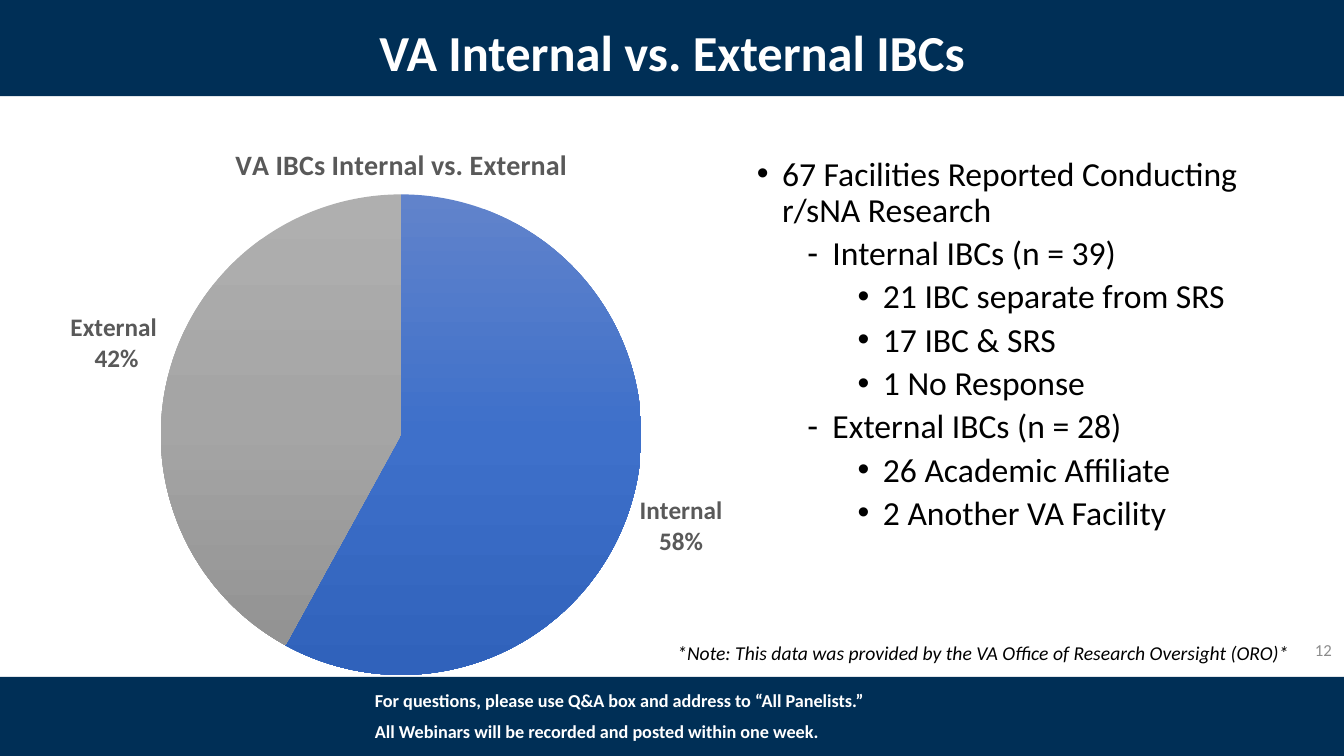
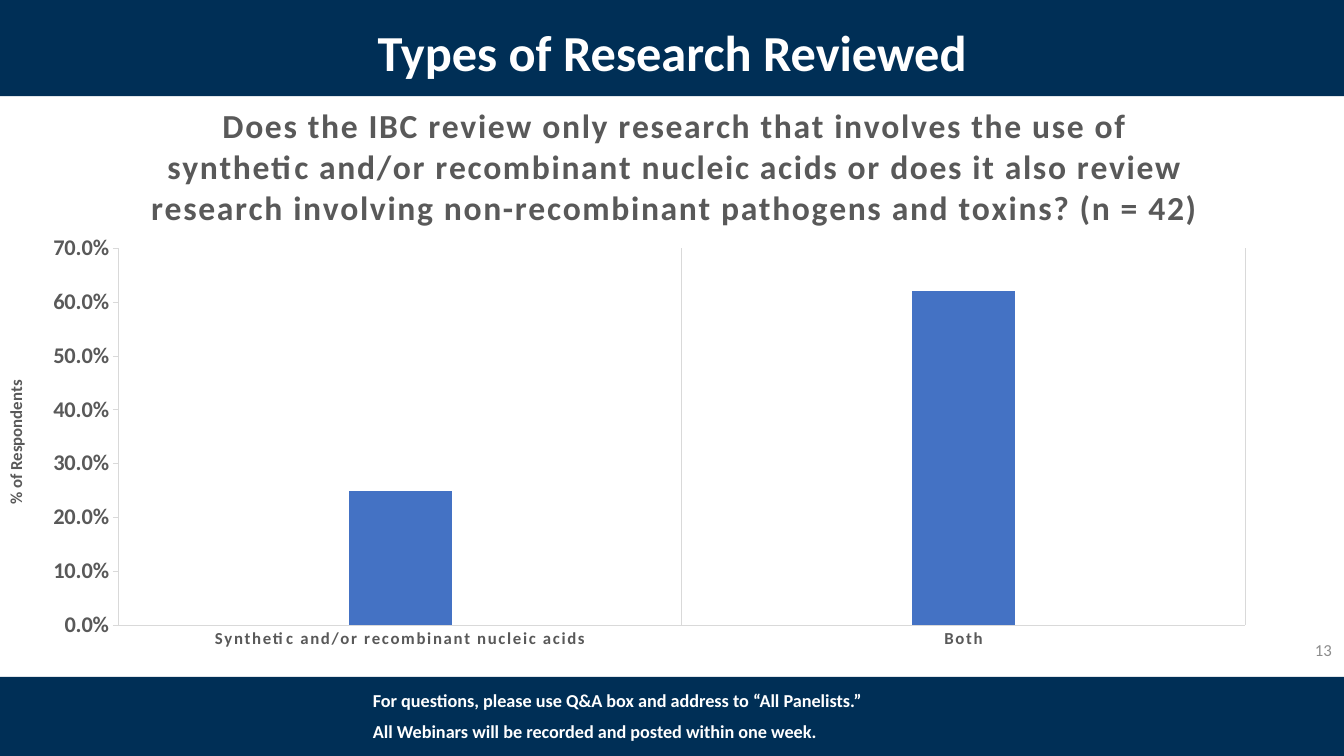
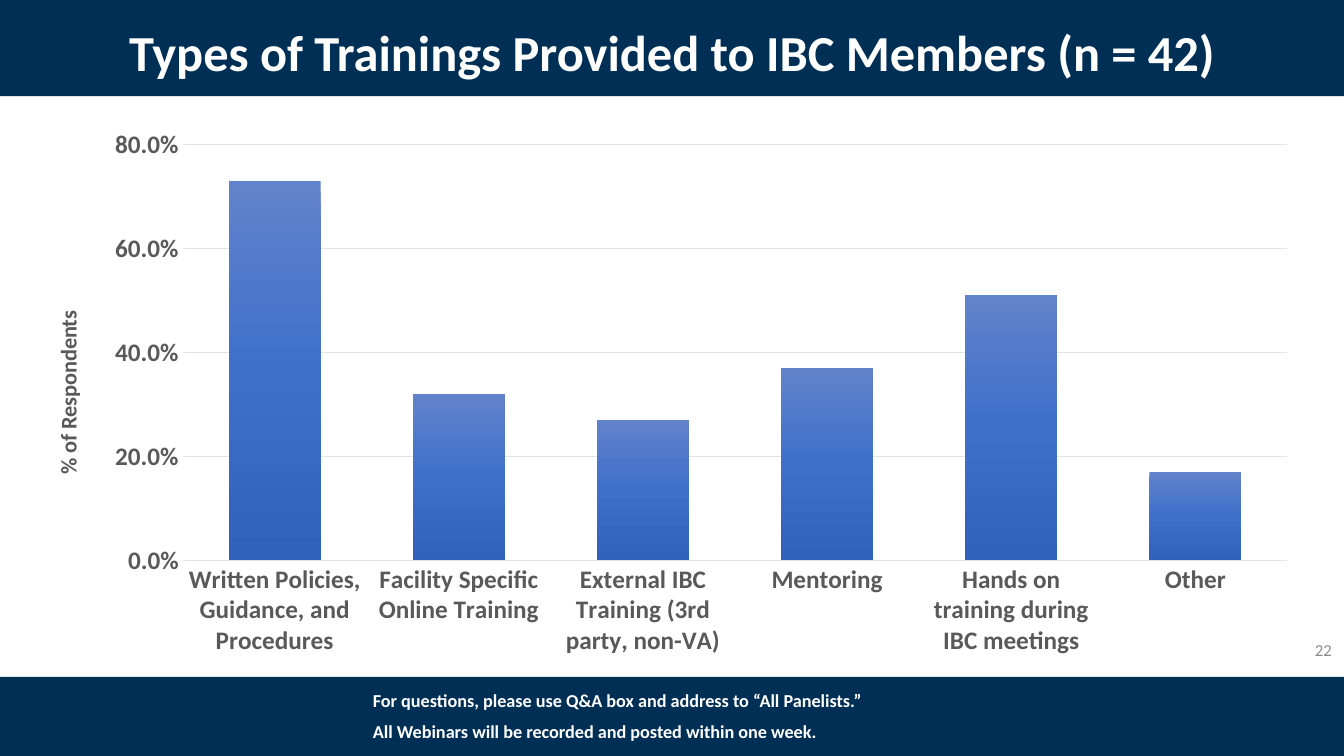
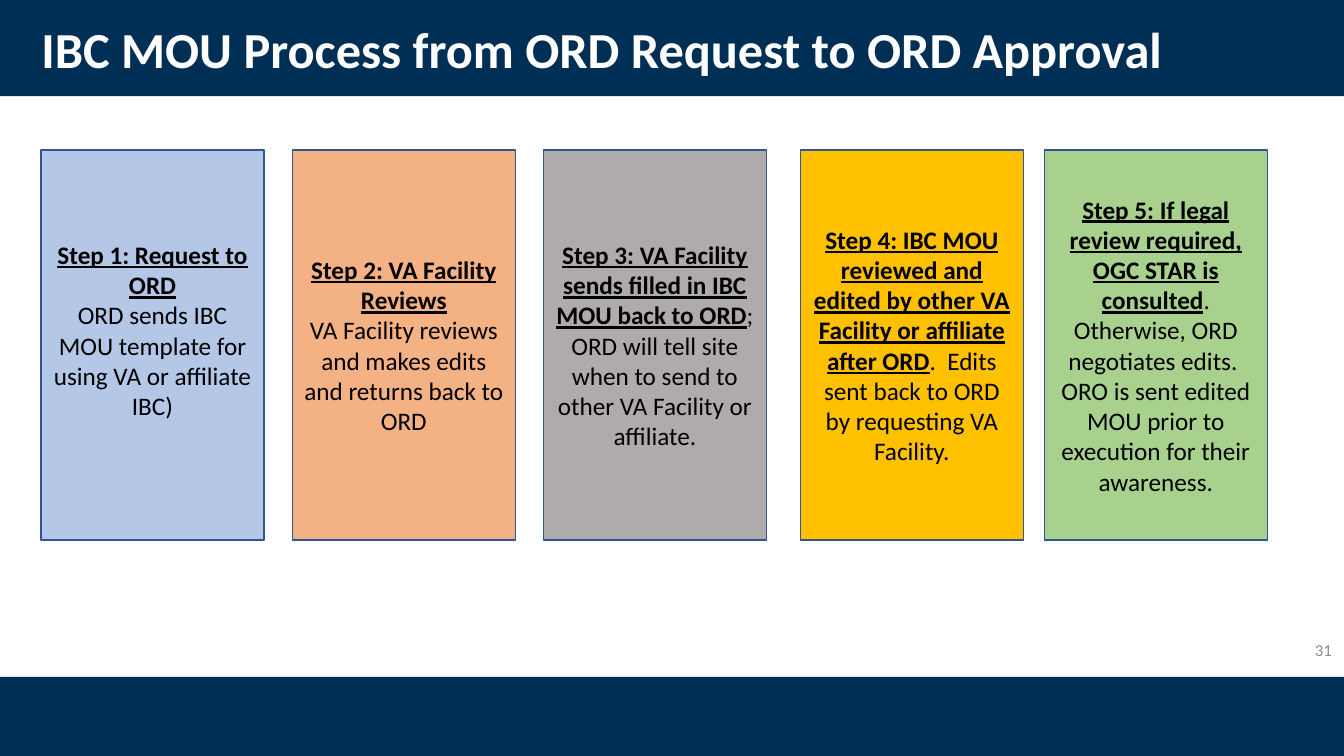
"""Build four slides on the survey of institutional biosafety committees."""
from copy import deepcopy

from lxml import etree
from pptx import Presentation
from pptx import util as u
from pptx.chart.data import CategoryChartData
from pptx.dml.color import RGBColor
from pptx.enum import chart as charts, shapes, text
from pptx.oxml.ns import qn

WIDTH, HEIGHT = u.Inches(13.33), u.Inches(7.5)
FONT = "Calibri"
NAVY, WHITE, BLACK = "002F56", "FFFFFF", "000000"
GRAY, PALE, RULE, SOFT_RULE = "595959", "8C8C8C", "D9D9D9", "E0E5EB"
BLUE, OUTLINE = "4472C4", "325491"
BLUE_FADE = ("6183CB", "3E70CA", "3062BB")
GRAY_FADE = ("AFAFAF", "A5A5A5", "939393")
LEFT, CENTER, RIGHT = text.PP_ALIGN.LEFT, text.PP_ALIGN.CENTER, text.PP_ALIGN.RIGHT
MIDDLE = text.MSO_ANCHOR.MIDDLE

TITLE_AREA = (6.9, 1.83, 86.25, 10.93)
FOOTER = (
    "For questions, please use Q&A box and address to “All Panelists.”\n"
    "All Webinars will be recorded and posted within one week."
)
FACILITIES = [
    (0, "67 Facilities Reported Conducting r/sNA Research"),
    (1, "Internal IBCs (n = 39)"),
    (2, "21 IBC separate from SRS"),
    (2, "17 IBC & SRS"),
    (2, "1 No Response"),
    (1, "External IBCs (n = 28)"),
    (2, "26 Academic Affiliate"),
    (2, "2 Another VA Facility"),
]
NOTE = "*Note: This data was provided by the VA Office of Research Oversight (ORO)*"
QUESTION = (
    "Does the IBC review only research that involves the use of\n"
    "synthetic and/or recombinant nucleic acids or does it also review\n"
    "research involving non-recombinant pathogens and toxins? (n = 42)"
)
RESEARCH = {"Synthetic and/or recombinant nucleic acids": 0.25, "Both": 0.62}
TRAININGS = {
    "Written Policies, Guidance, and Procedures": 0.73,
    "Facility Specific Online Training": 0.32,
    "External IBC Training (3rd party, non-VA)": 0.27,
    "Mentoring": 0.37,
    "Hands on training during IBC meetings": 0.51,
    "Other": 0.17,
}
STEPS = [
    (3.05, "B4C7E7", "Step 1: Request to ORD", True,
     "ORD sends IBC MOU template for using VA or affiliate IBC)"),
    (21.75, "F4B183", "Step 2: VA Facility Reviews", True,
     "VA Facility reviews and makes edits and returns back to ORD"),
    (40.43, "AFABAB", "Step 3: VA Facility sends filled in IBC MOU back to ORD",
     False, "; ORD will tell site when to send to other VA Facility or affiliate."),
    (59.55, "FFC000", "Step 4: IBC MOU reviewed and edited by other VA Facility or "
     "affiliate after ORD", False,
     ".  Edits sent back to ORD by requesting VA Facility."),
    (77.7, "A9D18E", "Step 5: If legal review required, OGC STAR is consulted",
     False, ". Otherwise, ORD negotiates edits.  ORO is sent edited MOU prior to "
     "execution for their awareness."),
]


def rgb(code):
    """Turn a hex string into a colour."""
    return RGBColor.from_string(code)


def area(left, top, width, height):
    """Turn percentages of the slide into a position and a size."""
    return [int(share * side / 100) for share, side in
            zip((left, top, width, height), (WIDTH, HEIGHT) * 2)]


def style_font(font, size, color=BLACK, bold=False, italic=False, spacing=0):
    """Set the face, size, colour and letter spacing of a font."""
    font.name, font.size = FONT, u.Pt(size)
    font.bold, font.italic = bold, italic
    font.color.rgb = rgb(color)
    if spacing:
        font._element.set("spc", str(round(spacing * 100)))


def style_text(frame, align=LEFT, leading=1.0, before=0, **look):
    """Format every paragraph and run of a text frame."""
    frame.word_wrap = True
    for index, para in enumerate(frame.paragraphs):
        para.alignment, para.line_spacing = align, leading
        para.space_before = u.Pt(before if index else 0)
        for span in para.runs:
            style_font(span.font, **look)


def add_text(page, place, words, anchor=text.MSO_ANCHOR.TOP, **look):
    """Add a formatted text box and return its frame."""
    frame = page.shapes.add_textbox(*area(*place)).text_frame
    frame.text, frame.vertical_anchor = words, anchor
    style_text(frame, **look)
    return frame


def add_block(page, place, color, outline=None):
    """Add a flat rectangle."""
    block = page.shapes.add_shape(shapes.MSO_SHAPE.RECTANGLE, *area(*place))
    block.shadow.inherit = False
    block.fill.solid()
    block.fill.fore_color.rgb = rgb(color)
    if outline:
        block.line.color.rgb = rgb(outline)
        block.line.width = u.Pt(1)
    else:
        block.line.fill.background()
    return block


def add_bands(deck, layout):
    """Put the top and bottom bands into the shared layout."""
    page = deck.slides[0]
    for place in ((0, 0, 100, 12.73), (0, 89.54, 100, 10.46)):
        band = add_block(page, place, NAVY)
        layout.shapes.element.insert(2, band.element)


def add_page(deck, layout, title, number, place=TITLE_AREA, align=CENTER):
    """Add a slide with its title and number."""
    page = deck.slides.add_slide(layout)
    heading = page.shapes.title
    heading.left, heading.top, heading.width, heading.height = area(*place)
    frame = heading.text_frame
    frame.text, frame.vertical_anchor = title, MIDDLE
    frame.auto_size = text.MSO_AUTO_SIZE.NONE
    style_text(frame, align, 0.9, size=36, color=WHITE, bold=True)
    add_text(page, (77.33, 83.3, 22.5, 5.33), str(number), MIDDLE,
             align=RIGHT, size=12, color=PALE)
    return page


def add_footer(page, left=27):
    """Add the audience notice on the bottom band."""
    add_text(page, (left, 91.07, 39.45, 8.13), FOOTER, leading=0.8, before=10,
             size=13, color=WHITE, bold=True)


def add_bullets(page, place, items):
    """Add a bulleted list of (level, words) items."""
    frame = add_text(page, place, "\n".join(words for _, words in items),
                     leading=0.9, before=5, size=24)
    for para, (level, _) in zip(frame.paragraphs, items):
        props = para._p.get_or_add_pPr()
        props.set("marL", str(u.Inches(0.25 + 0.5 * level)))
        props.set("indent", str(u.Inches(-0.25)))
        face = FONT if level == 1 else "Arial"
        etree.SubElement(props, qn("a:buFont")).set("typeface", face)
        etree.SubElement(props, qn("a:buChar")).set("char", "•‐•"[level])
        para.font.size = u.Pt(24)


def add_step(page, place, color, heading, apart, body):
    """Add a step card with an underlined heading and a plain body."""
    card = add_block(page, place, color, OUTLINE)
    frame = card.text_frame
    frame.text, frame.vertical_anchor = heading, MIDDLE
    para = frame.add_paragraph() if apart else frame.paragraphs[0]
    para.add_run().text = body
    style_text(frame, CENTER, size=18)
    lead = frame.paragraphs[0].runs[0].font
    lead.bold = lead.underline = True
    return frame


def set_layout(element, **shares):
    """Give a chart part a fixed place in percent of the chart."""
    layout = element.find(qn("c:layout"))
    if layout is None:
        layout = etree.SubElement(element, qn("c:layout"))
        element.insert(0, layout)
    manual = etree.SubElement(layout, qn("c:manualLayout"))
    if "w" in shares:
        etree.SubElement(manual, qn("c:layoutTarget")).set("val", "inner")
    for key in "xy":
        etree.SubElement(manual, qn(f"c:{key}Mode")).set("val", "edge")
    for key, share in shares.items():
        etree.SubElement(manual, qn(f"c:{key}")).set("val", str(share / 100))


def set_plot_layout(chart, **shares):
    """Fix the inner plot area of a chart."""
    set_layout(chart.element.find(f".//{qn('c:plotArea')}"), **shares)


def fade(fill, colors):
    """Fill from top to bottom with three colours."""
    fill.gradient()
    fill.gradient_angle = 270
    stops = fill._xPr.find(f".//{qn('a:gsLst')}")
    stops.insert(1, deepcopy(stops[0]))
    for index, (stop, color) in enumerate(zip(fill.gradient_stops, colors)):
        stop.color.rgb = rgb(color)
        stop.position = index / 2


def add_chart(page, kind, place, values):
    """Add a chart with one series and no legend."""
    data = CategoryChartData()
    data.categories = list(values)
    data.add_series("Series 1", list(values.values()))
    chart = page.shapes.add_chart(kind, *area(*place), data).chart
    style_font(chart.font, 10, GRAY)
    chart.has_legend = chart.has_title = False
    return chart


def set_chart_title(chart, words, size, spacing=0, **shares):
    """Give a chart a bold title at a fixed place."""
    chart.has_title = True
    title = chart.chart_title
    title.text_frame.text = words
    for para in title.text_frame.paragraphs:
        style_font(para.runs[0].font, size, GRAY, True, spacing=spacing)
    set_layout(title._element, **shares)


def add_pie(page, place, values, fades):
    """Add a pie with category and percent labels."""
    chart = add_chart(page, charts.XL_CHART_TYPE.PIE, place, values)
    series = chart.plots[0].series[0]
    for index, colors in enumerate(fades):
        fade(series.points[index].format.fill, colors)
    labels = series.data_labels
    labels.show_value, labels.show_percentage = False, True
    labels.show_category_name = True
    labels.number_format, labels.number_format_is_linked = "0%", False
    labels.position = charts.XL_LABEL_POSITION.OUTSIDE_END
    style_font(labels.font, 18, GRAY, True)
    separator = etree.Element(qn("c:separator"))
    separator.text = "\n"
    labels._element.find(qn("c:showBubbleSize")).addnext(separator)
    return chart


def draw_rule(line, color):
    """Set a thin chart line."""
    line.color.rgb, line.width = rgb(color), u.Pt(0.75)


def add_columns(page, place, values, top, step, gap, overlap, rule, sizes):
    """Add a column chart; sizes are for categories, values and axis title."""
    chart = add_chart(page, charts.XL_CHART_TYPE.COLUMN_CLUSTERED, place, values)
    plot = chart.plots[0]
    plot.vary_by_categories = False
    plot.gap_width, plot.overlap = gap, overlap
    across, upright = chart.category_axis, chart.value_axis
    upright.minimum_scale, upright.maximum_scale = 0, top
    upright.major_unit = step
    upright.tick_labels.number_format = "0.0%"
    upright.tick_labels.number_format_is_linked = False
    for axis, size in zip((across, upright), sizes):
        axis.major_tick_mark = axis.minor_tick_mark = charts.XL_TICK_MARK.NONE
        style_font(axis.tick_labels.font, size, GRAY, True)
        draw_rule(axis.format.line, rule)
    frame = upright.axis_title.text_frame
    frame.text = "% of Respondents"
    frame._txBody.bodyPr.set("rot", "-5400000")
    frame._txBody.bodyPr.set("vert", "horz")
    style_font(frame.paragraphs[0].runs[0].font, sizes[2], GRAY, True)
    return chart


def build_committees(deck, layout):
    """Build the slide on internal and external committees."""
    page = add_page(deck, layout, "VA Internal vs. External IBCs", 12)
    add_footer(page, 27.15)
    chart = add_pie(page, (1.5, 14.8, 56.03, 76.4),
                    {"Internal": 58, "External ": 42}, (BLUE_FADE, GRAY_FADE))
    set_chart_title(chart, "VA IBCs Internal vs. External", 20, x=27.9, y=4.8)
    set_plot_layout(chart, x=18.6, y=14.3, w=64, h=83.2)
    add_bullets(page, (55.58, 20.13, 40.05, 59.87), FACILITIES)
    add_text(page, (47.29, 84.13, 51.75, 4.53), NOTE, align=CENTER, size=14,
             italic=True)


def build_research(deck, layout):
    """Build the slide on the research reviewed."""
    page = add_page(deck, layout, "Types of Research Reviewed", 13)
    add_footer(page)
    chart = add_columns(page, (0, 12.67, 99.3, 76.53), RESEARCH, 0.7, 0.1, 444,
                        -90, RULE, (12, 16, 12))
    set_chart_title(chart, QUESTION, 24, 1.2, x=11.1, y=1.1)
    set_plot_layout(chart, x=8.9, y=26.4, w=84.4, h=65.1)
    across, upright = chart.category_axis, chart.value_axis
    across.tick_labels.font._element.set("spc", "120")
    across.has_major_gridlines, upright.has_major_gridlines = True, False
    draw_rule(across.major_gridlines.format.line, RULE)
    upright.major_tick_mark = charts.XL_TICK_MARK.OUTSIDE
    set_layout(upright.axis_title._element, x=0.1, y=48.6)
    fill = chart.plots[0].series[0].format.fill
    fill.solid()
    fill.fore_color.rgb = rgb(BLUE)


def build_trainings(deck, layout):
    """Build the slide on trainings."""
    page = add_page(deck, layout,
                    "Types of Trainings Provided to IBC Members (n = 42)", 22)
    add_footer(page)
    chart = add_columns(page, (2.3, 15.67, 95.4, 72.53), TRAININGS, 0.8, 0.2,
                        100, -24, SOFT_RULE, (18, 18, 16))
    draw_rule(chart.value_axis.major_gridlines.format.line, SOFT_RULE)
    chart.value_axis.format.line.fill.background()
    fade(chart.plots[0].series[0].format.fill, BLUE_FADE)


def build_process(deck, layout):
    """Build the slide on the approval steps."""
    page = add_page(deck, layout, "IBC MOU Process from ORD Request to ORD Approval",
                    31, (2.33, 2.4, 86.25, 9.07), LEFT)
    frames = [add_step(page, (left, 19.84, 16.6, 51.6), *step)
              for left, *step in STEPS]
    frames[0].margin_bottom = u.Inches(0.35)


def main():
    """Build and save the deck."""
    deck = Presentation()
    deck.slide_width, deck.slide_height = WIDTH, HEIGHT
    layout = deck.slide_layouts.get_by_name("Title Only")
    for build in (build_committees, build_research, build_trainings, build_process):
        build(deck, layout)
    add_bands(deck, layout)
    deck.save("out.pptx")


if __name__ == "__main__":
    main()
